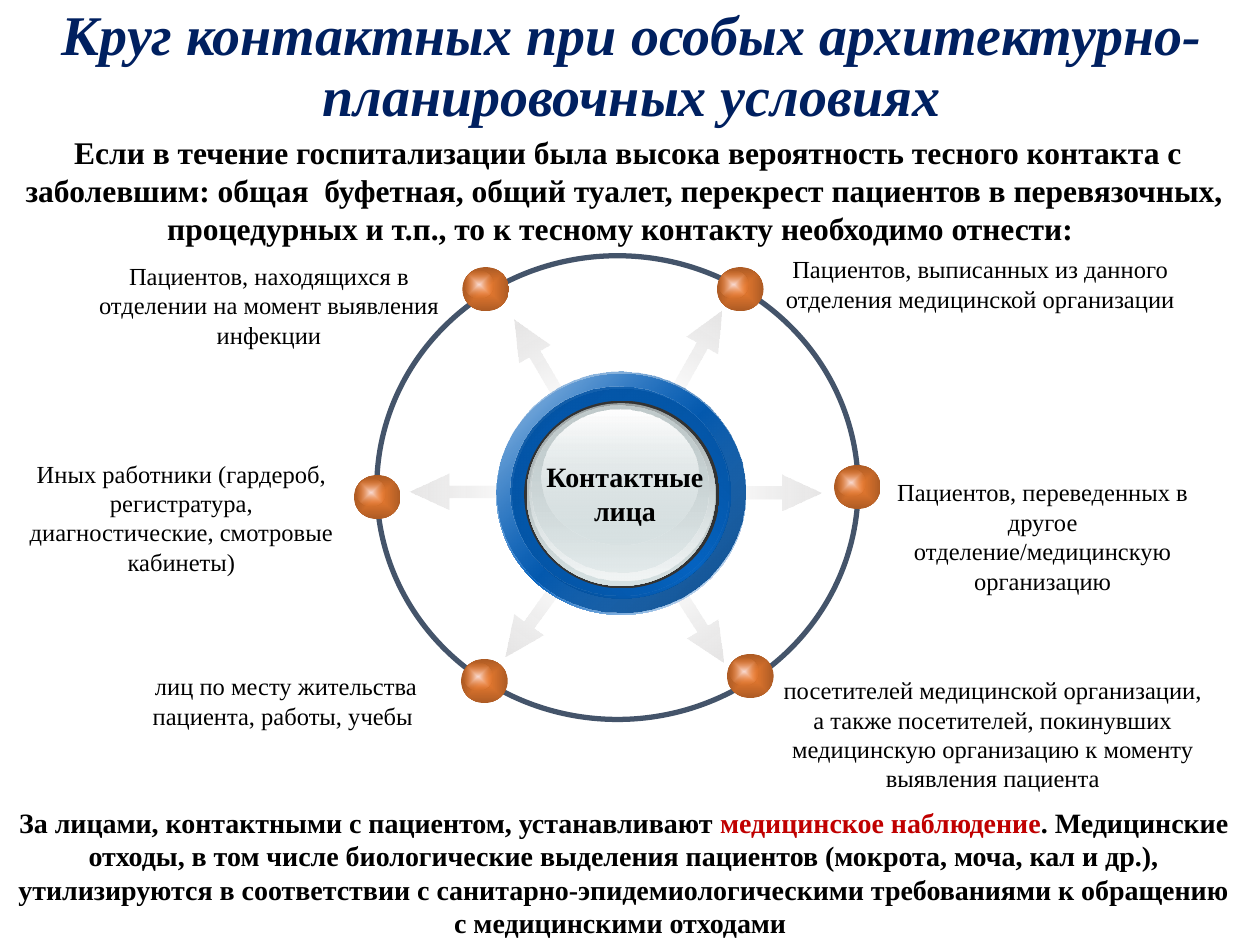
"""Builds a slide about the circle of contacts around a hospital patient."""
from lxml import etree
from pptx import Presentation
from pptx.dml.color import RGBColor
from pptx.enum.shapes import MSO_SHAPE as Shape
from pptx.enum.text import MSO_ANCHOR as Anchor, MSO_AUTO_SIZE as AutoSize, PP_ALIGN as Align
from pptx.oxml.ns import nsdecls, qn
from pptx.util import Inches, Pt

FONT = "Times New Roman"
COLORS = {
    "title": "002060", "text": "000000", "accent": "C00000", "ring": "44546A", "rim": "333333",
    "arrow_dark": "DCDBDB", "arrow_light": "E7E6E6",
    "orange": "ED7D31", "brown": "AD5B24", "glow": "F9DBD3",
    "white": "FFFFFF", "blue": "0563C1", "navy": "04478A", "deep": "044C94", "mid": "04519E",
    "steel": "99A1A2", "silver": "C1CBCC", "mist": "D6E1E2", "pale": "F2F5F5",
}
COLUMNS = 100

TITLE = "Круг контактных при особых архитектурно-планировочных условиях"
INTRO = [(" Если в течение госпитализации была высока вероятность тесного контакта с заболевшим: "
          "общая  буфетная, общий туалет, перекрест пациентов в перевязочных, процедурных и т.п., "
          "то к тесному контакту необходимо отнести: ", "text")]
FOOTER = [
    ("За лицами, контактными с пациентом, устанавливают ", "text"),
    ("медицинское наблюдение", "accent"),
    (". Медицинские отходы, в том числе биологические выделения пациентов (мокрота, моча, кал и др.), "
     "утилизируются в соответствии с санитарно-эпидемиологическими требованиями к обращению "
     "с медицинскими отходами ", "text"),
]
HUB_TEXT = [("Контактные лица", "text")]
LABELS = [
    ("Пациентов, выписанных из данного отделения медицинской организации", (60.7, 19.7, 34.2, 5.7)),
    ("Пациентов, находящихся в отделении на момент выявления инфекции", (5.6, 20.2, 31.5, 8.1)),
    ("Пациентов, переведенных в другое отделение/медицинскую организацию", (68.7, 37.4, 28.1, 10.4)),
    ("посетителей медицинской организации, а также посетителей, покинувших "
     "медицинскую организацию к моменту выявления пациента", (60.8, 53.1, 36, 10.4)),
    ("Иных работники (гардероб, регистратура, диагностические, смотровые кабинеты)",
     (0.3, 35.9, 28.2, 10.4)),
    ("лиц по месту жительства пациента, работы, учебы ", (8.6, 52.8, 28.2, 5.7)),
]

ARROWS = [
    (55.3, 28.05, 7.8, 299.6), (55.3, 49.25, 7.8, 57.8), (42.8, 28.75, 7.8, 239.5),
    (42.4, 48.95, 7.8, 125.6), (61.15, 39.1, 8.1, 0), (36.9, 39, 8.8, 180),
]
ARROW_HEIGHT = 2.85
RING = (29.9, 20.3, 38.2, 36.8)
BEADS = [(36.6, 52.3), (28.1, 37.7), (36.7, 21.2), (56.9, 21.2), (66.2, 36.9), (57.7, 51.9)]
BEAD_SIZE, SHINE_SIZE, SHINE_SHIFT = (3.7, 3.5), (2.3, 2.2), (0.17, 0.3)

ARROW_STOPS = [(0, "arrow_dark", 0), (100, "arrow_light", 100)]
BEAD_STOPS = [(0, "orange", 100), (100, "brown", 100)]
SHINE_STOPS = [(0, "glow", 100), (100, "orange", 0)]
HUB_DISCS = [
    ((39.4, 29.7, 19.8, 19.1), 45, [(0, "white", 100), (50, "blue", 100), (100, "white", 100)]),
    ((39.4, 29.5, 19.8, 19.1), 45, [(0, "blue", 32), (100, "navy", 100)]),
    ((40.7, 30.9, 17.3, 16.6), 315, [(0, "deep", 100), (50, "blue", 100), (100, "deep", 100)]),
    ((40.5, 30.7, 17.3, 16.6), 45, [(0, "mid", 100), (100, "blue", 0)]),
    ((41.6, 31.8, 15.5, 14.9), 0, [(0, "rim", 100), (100, "rim", 100)]),
    ((41.8, 32, 15, 14.5), 90, [(0, "steel", 100), (100, "mist", 100)]),
    ((42, 32, 14.7, 14.1), 90, [(0, "mist", 0), (100, "pale", 100)]),
    ((42.2, 32.2, 14, 13.2), 90, [(0, "silver", 100), (100, "mist", 48)]),
    ((43, 32.5, 12.4, 10.7), 90, [(0, "white", 100), (100, "mist", 38)]),
]

deck = Presentation()
deck.slide_width, deck.slide_height = Inches(10), Inches(7.5)
page = deck.slides.add_slide(deck.slide_layouts[5])
CELL = deck.slide_width / COLUMNS


def place(frame):
    return [round(value * CELL) for value in frame]


def add_shape(kind, frame):
    shape = page.shapes.add_shape(kind, *place(frame))
    shape.shadow.inherit = False
    shape.fill.background()
    shape.line.fill.background()
    return shape


def set_gradient(shape, stops, angle=None):
    marks = "".join(
        f'<a:gs pos="{pos * 1000}"><a:srgbClr val="{COLORS[name]}">'
        f'<a:alpha val="{alpha * 1000}"/></a:srgbClr></a:gs>' for pos, name, alpha in stops)
    if angle is None:
        course = '<a:path path="shape"><a:fillToRect l="50000" t="50000" r="50000" b="50000"/></a:path>'
    else:
        course = f'<a:lin ang="{angle * 60000}" scaled="1"/>'
    gradient = etree.fromstring(
        f'<a:gradFill {nsdecls("a")} rotWithShape="1"><a:gsLst>{marks}</a:gsLst>{course}</a:gradFill>')
    properties = shape.element.spPr
    properties.replace(properties.find(qn("a:noFill")), gradient)


def write(box, runs, size, bold=False, italic=False):
    frame = box.text_frame
    frame.word_wrap = True
    para = frame.paragraphs[0]
    para.alignment = Align.CENTER
    for text, color in runs:
        span = para.add_run()
        span.text = text
        font = span.font
        font.name, font.size, font.bold, font.italic = FONT, Pt(size), bold, italic
        font.color.rgb = RGBColor.from_string(COLORS[color])
    return para


def add_text(frame, runs, size, bold=False):
    write(page.shapes.add_textbox(*place(frame)), runs, size, bold)


def add_bead(left, top):
    set_gradient(add_shape(Shape.OVAL, (left, top, *BEAD_SIZE)), BEAD_STOPS)
    shine = (left + SHINE_SHIFT[0], top + SHINE_SHIFT[1], *SHINE_SIZE)
    set_gradient(add_shape(Shape.OVAL, shine), SHINE_STOPS)


title = page.shapes.title
title.left, title.top, title.width, title.height = place((1, 0.7, 98.3, 9.4))
write(title, [(TITLE, "title")], 32, bold=True, italic=True).line_spacing = 0.9
title.text_frame.vertical_anchor = Anchor.MIDDLE
title.text_frame.auto_size = AutoSize.NONE

add_text((0, 10.1, 99.1, 14.5), INTRO, 18, bold=True)
add_text((0.4, 63.4, 98.2, 11.8), FOOTER, 16, bold=True)

for center_x, center_y, length, angle in ARROWS:
    arrow = add_shape(Shape.RIGHT_ARROW, (center_x - length / 2, center_y - ARROW_HEIGHT / 2,
                                          length, ARROW_HEIGHT))
    arrow.adjustments[0], arrow.adjustments[1] = 0.35, 1.11
    arrow.rotation = angle
    set_gradient(arrow, ARROW_STOPS, 0)

ring = add_shape(Shape.OVAL, RING)
ring.line.color.rgb = RGBColor.from_string(COLORS["ring"])
ring.line.width = Pt(3)

for frame, angle, stops in HUB_DISCS:
    set_gradient(add_shape(Shape.OVAL, frame), stops, angle)
for text, frame in LABELS:
    add_text(frame, [(text, "text")], 14)
for left, top in BEADS:
    add_bead(left, top)
add_text((40.9, 36, 17.4, 6.4), HUB_TEXT, 16, bold=True)

deck.save("out.pptx")
